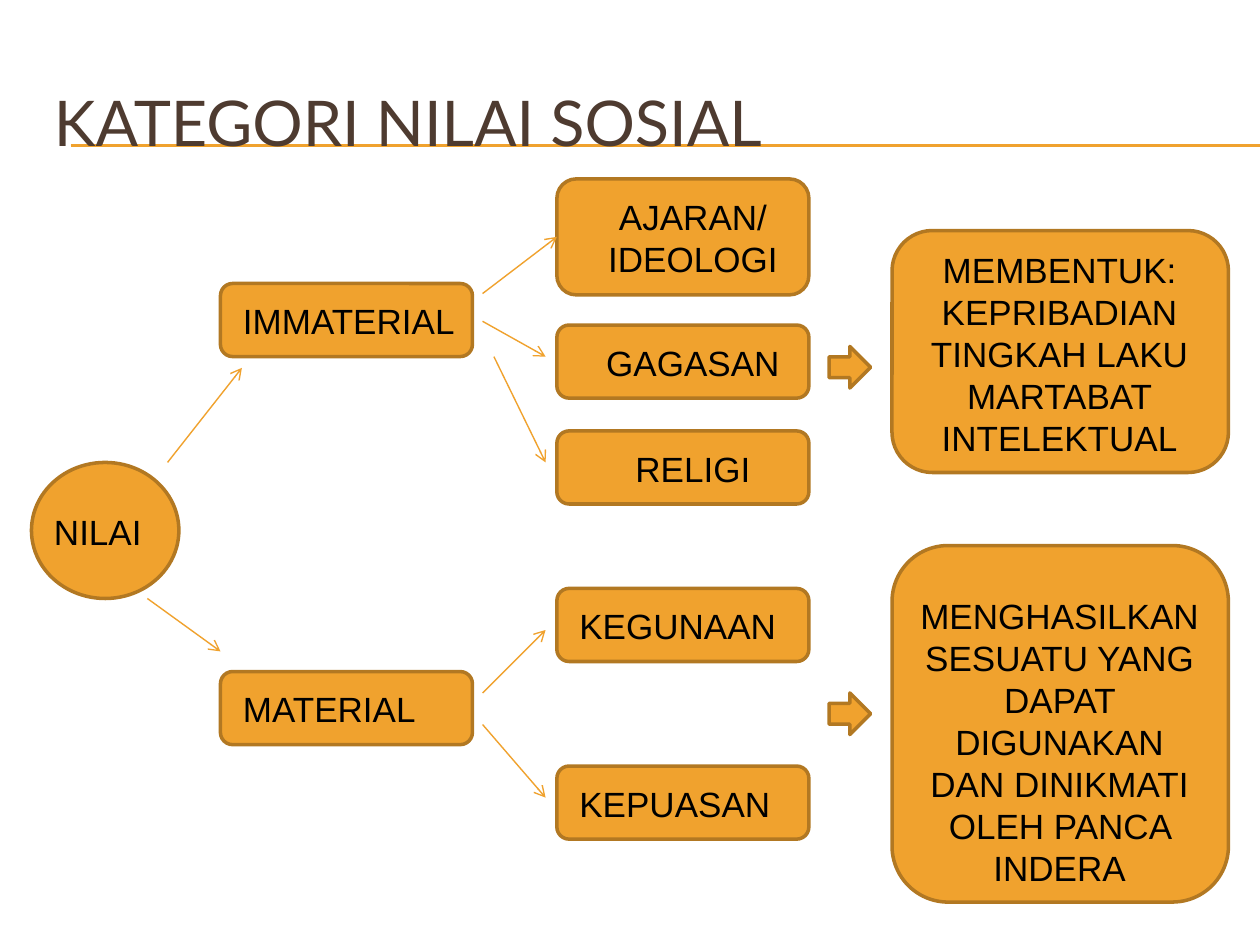
from lxml import etree
from pptx import Presentation
from pptx.dml.color import RGBColor
from pptx.enum.shapes import MSO_CONNECTOR, MSO_SHAPE
from pptx.enum.text import MSO_ANCHOR, PP_ALIGN
from pptx.oxml.ns import qn
from pptx.util import Inches, Pt

ROUNDED, ELLIPSE = MSO_SHAPE.ROUNDED_RECTANGLE, MSO_SHAPE.OVAL
BLOCK_ARROW = MSO_SHAPE.RIGHT_ARROW
STRAIGHT = MSO_CONNECTOR.STRAIGHT
LEFT, CENTER = PP_ALIGN.LEFT, PP_ALIGN.CENTER
TOP, MIDDLE = MSO_ANCHOR.TOP, MSO_ANCHOR.MIDDLE

ORANGE, BROWN, TITLE_COLOR, BLACK = "F0A22E", "B27822", "4E3B30", "000000"
BOX_W, BOX_H = 2, 0.58
INSET = 0.08  # offset of a label from its box
CATEGORY_X, EXAMPLE_X, RESULT_X = 1.75, 4.42, 7.08

CATEGORIES = [("IMMATERIAL", 2.25), ("MATERIAL", 5.33)]
EXAMPLES = [
    # text, top, height, alignment
    ("AJARAN/ IDEOLOGI", 1.42, 0.92, CENTER),
    ("GAGASAN", 2.58, BOX_H, CENTER),
    ("RELIGI", 3.42, BOX_H, CENTER),
    ("KEGUNAAN", 4.67, BOX_H, LEFT),
    ("KEPUASAN", 6.08, BOX_H, LEFT),
]
RESULTS = [
    # text, top, height, label top
    ("MEMBENTUK:\nKEPRIBADIAN\nTINGKAH LAKU\nMARTABAT\nINTELEKTUAL", 1.83, 1.92, 1.92),
    ("MENGHASILKAN SESUATU YANG DAPAT DIGUNAKAN DAN DINIKMATI OLEH PANCA INDERA",
     4.33, 2.83, 4.67),
]
ARROWS = [
    (1.33, 3.67, 1.92, 2.92),
    (1.17, 4.75, 1.75, 5.17),
    (3.83, 2.55, 4.33, 2.83),
    (3.92, 2.83, 4.33, 3.67),
    (3.83, 5.75, 4.33, 6.33),
    (3.83, 5.5, 4.33, 5),
]


def rgb(color):
    return RGBColor.from_string(color)


def add_shape(slide, kind, x, y, w, h):
    sp = slide.shapes.add_shape(kind, Inches(x), Inches(y), Inches(w), Inches(h))
    sp.shadow.inherit = False
    sp.fill.solid()
    sp.fill.fore_color.rgb = rgb(ORANGE)
    sp.line.color.rgb = rgb(BROWN)
    sp.line.width = Pt(2)
    return sp


def add_text(slide, text, x, y, w, h, align=LEFT, anchor=TOP,
             size=20, font="Arial", color=BLACK):
    tf = slide.shapes.add_textbox(Inches(x), Inches(y), Inches(w), Inches(h)).text_frame
    tf.word_wrap = True
    tf.vertical_anchor = anchor
    tf.text = text
    for p in tf.paragraphs:
        p.alignment = align
        for r in p.runs:
            r.font.size = Pt(size)
            r.font.name = font
            r.font.color.rgb = rgb(color)


def add_line(slide, x1, y1, x2, y2, width=0.75):
    line = slide.shapes.add_connector(
        STRAIGHT, Inches(x1), Inches(y1), Inches(x2), Inches(y2))
    line.line.color.rgb = rgb(ORANGE)
    line.line.width = Pt(width)
    etree.SubElement(line._element.spPr, qn("a:effectLst"))
    return line


def add_arrow(slide, x1, y1, x2, y2):
    arrow = add_line(slide, x1, y1, x2, y2, 0.79)
    etree.SubElement(arrow.line._get_or_add_ln(), qn("a:tailEnd"), type="arrow")
    return arrow


def add_box(slide, text, x, y, h=BOX_H, align=LEFT):
    box = add_shape(slide, ROUNDED, x, y, BOX_W, h)
    add_text(slide, text, x + INSET, y + INSET, BOX_W, h - 0.14, align)
    return box


def main():
    prs = Presentation()
    prs.slide_width, prs.slide_height = Inches(10), Inches(7.5)
    slide = prs.slides.add_slide(prs.slide_layouts[6])

    for y in (1.15, 1.16):
        add_line(slide, 0.56, y, 10, y)
    add_text(slide, "KATEGORI NILAI SOSIAL", 0.33, 0.5, 9.5, 0.92,
             anchor=MIDDLE, size=36, font="Lato", color=TITLE_COLOR)

    add_shape(slide, ELLIPSE, 0.25, 3.67, 1.17, 1.08)
    add_text(slide, "NILAI", 0.33, 4, 0.92, 0.44)

    for text, y in CATEGORIES:
        add_box(slide, text, CATEGORY_X, y)
    examples = [add_box(slide, text, EXAMPLE_X, y, h, align)
                for text, y, h, align in EXAMPLES]
    for text, y, h, label_y in RESULTS:
        add_shape(slide, ROUNDED, RESULT_X, y, 2.67, h)
        add_text(slide, text, RESULT_X + INSET, label_y, 2.5, y + h - label_y, CENTER)

    for ends in ARROWS:
        add_arrow(slide, *ends)
    add_arrow(slide, 3.83, 2.33, EXAMPLE_X, 1.88).end_connect(examples[0], 1)
    for y in (2.75, 5.5):
        add_shape(slide, BLOCK_ARROW, 6.58, y, 0.33, 0.33)

    prs.save("out.pptx")


if __name__ == "__main__":
    main()
